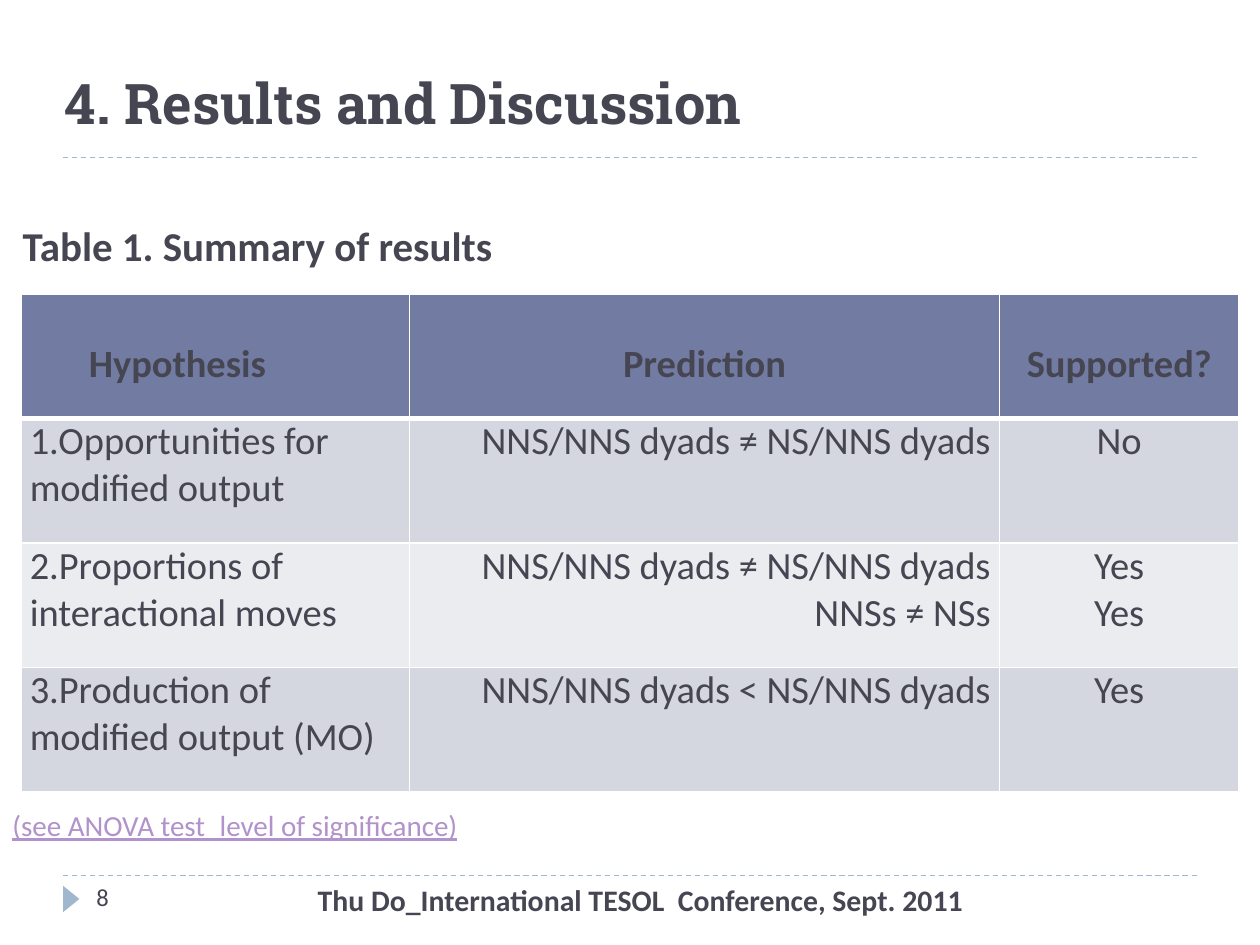
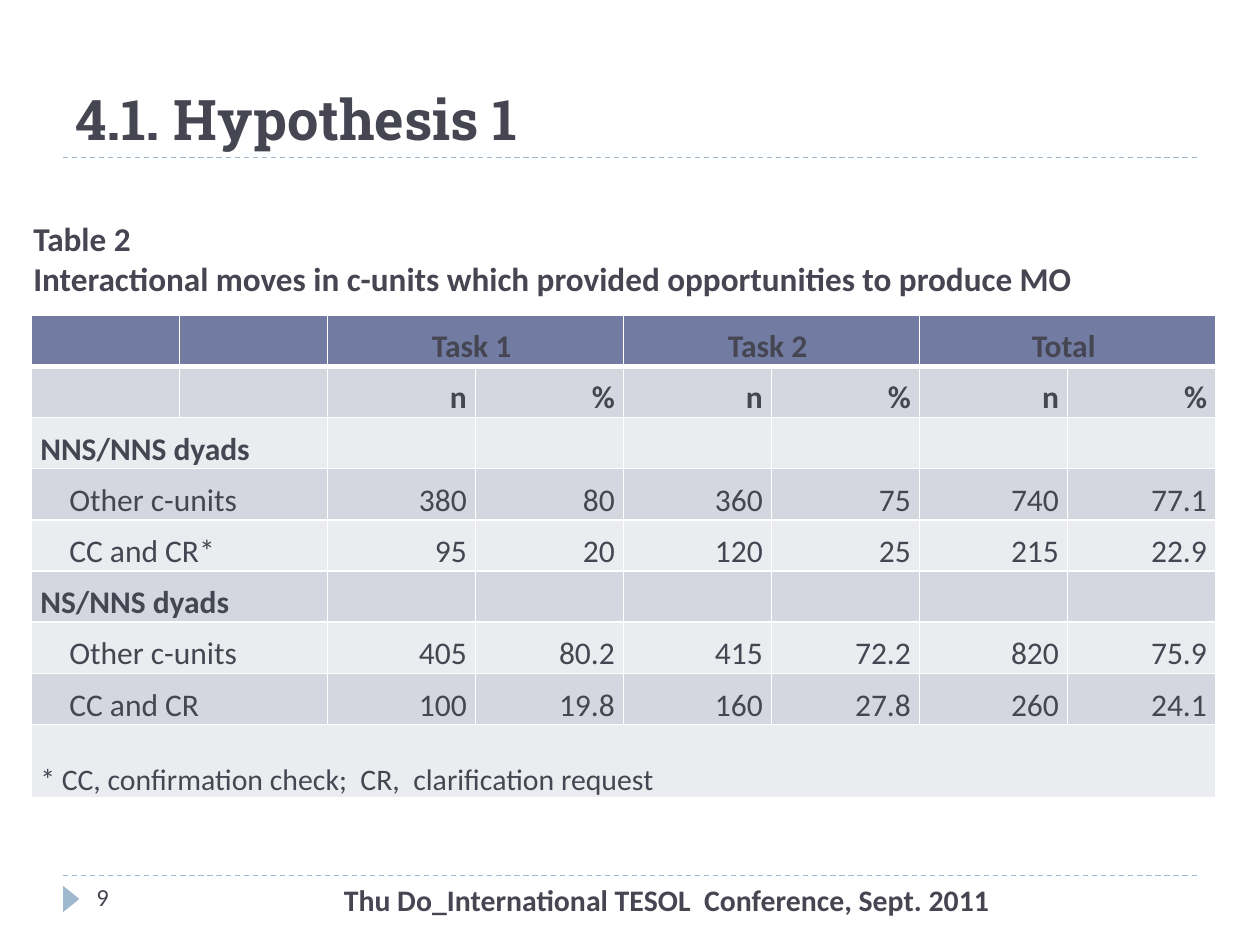
"""Build two slides that report the results of a study of dyads."""
from dataclasses import dataclass, field

from lxml import etree
from pptx import Presentation
from pptx.dml.color import RGBColor
from pptx.enum.dml import MSO_LINE
from pptx.enum.shapes import MSO_CONNECTOR, MSO_SHAPE
from pptx.enum.text import MSO_ANCHOR, PP_ALIGN
from pptx.oxml.ns import qn
from pptx.util import Emu, Inches, Pt

DASH = MSO_LINE.DASH
LINE, PEAK = MSO_CONNECTOR.STRAIGHT, MSO_SHAPE.ISOSCELES_TRIANGLE
TOP, MID, LOW = MSO_ANCHOR.TOP, MSO_ANCHOR.MIDDLE, MSO_ANCHOR.BOTTOM
LEFT, MIDST, RIGHT = PP_ALIGN.LEFT, PP_ALIGN.CENTER, PP_ALIGN.RIGHT

COLS, ROWS = 120, 90
WIDE, HIGH = Inches(10), Inches(7.5)
INK = {"text": "464653", "rule": "9FB8CD", "link": "B292CA", "head": "727CA3",
       "odd": "D5D7E0", "even": "EBECF0", "edge": "FFFFFF"}
BODY, SLAB = "Calibri", "Roboto Slab"
PAD = (1.2, 0.6, 1.2, 0.6)
SIDE = 0.84
FOOT = 83.4


@dataclass
class Note:
    """A text box: left, top, width and height in grid units, text and format."""
    box: tuple[float, float, float, float]
    text: str
    form: dict = field(default_factory=dict)


@dataclass
class Cell:
    """A table cell: text, number of columns and format."""
    text: str = ""
    span: int = 1
    form: dict = field(default_factory=dict)


@dataclass
class Grid:
    """A table: left and top, column widths, row heights, rows of cells."""
    spot: tuple[float, float]
    cols: list[float]
    rows: list[float]
    cells: list[list[Cell]]


def across(n: float) -> Emu:
    """Turn grid columns into a length."""
    return Emu(round(WIDE * n / COLS))


def down(n: float) -> Emu:
    """Turn grid rows into a length."""
    return Emu(round(HIGH * n / ROWS))


def place(box: tuple) -> tuple:
    """Turn a grid box into lengths."""
    x, y, w, h = box
    return across(x), down(y), across(w), down(h)


def hue(name: str) -> RGBColor:
    """Look up a colour."""
    return RGBColor.from_string(INK[name])


def write(frame, text: str, *, size: float = 18, face: str = BODY, tint: str = "text",
          bold: bool = False, under: bool = False, align=LEFT, pitch: float | None = None) -> None:
    """Write each line of the text as a paragraph."""
    for n, line in enumerate(text.split("\n")):
        para = frame.add_paragraph() if n else frame.paragraphs[0]
        para.alignment = align
        if pitch:
            para.line_spacing = pitch
        run = para.add_run()
        run.text = line
        font = run.font
        font.size, font.name, font.bold, font.underline = Pt(size), face, bold, under
        font.color.rgb = hue(tint)


def inset(item, pad: tuple) -> None:
    """Set the left, top, right and bottom margins of a frame or cell."""
    item.margin_left, item.margin_right = across(pad[0]), across(pad[2])
    item.margin_top, item.margin_bottom = down(pad[1]), down(pad[3])


def add_note(slide, note: Note) -> None:
    """Add a text box."""
    form = dict(note.form)
    frame = slide.shapes.add_textbox(*place(note.box)).text_frame
    frame.word_wrap = True
    frame.vertical_anchor = form.pop("anchor", TOP)
    inset(frame, form.pop("pad", PAD))
    write(frame, note.text, **form)


def add_rule(slide, y: float) -> None:
    """Add a dashed line across the slide."""
    rule = slide.shapes.add_connector(LINE, across(6), down(y), across(114), down(y))
    rule.line.color.rgb = hue("rule")
    rule.line.width = Pt(0.75)
    rule.line.dash_style = DASH
    etree.SubElement(rule._element.spPr, qn("a:effectLst"))


def edge(cell, tops: float, base: float) -> None:
    """Draw the four borders of a cell."""
    props = cell._tc.get_or_add_tcPr()
    for side, width in {"L": 1, "R": 1, "T": tops, "B": base}.items():
        line = etree.SubElement(props, qn(f"a:ln{side}"), w=str(Pt(width)))
        fill = etree.SubElement(line, qn("a:solidFill"))
        etree.SubElement(fill, qn("a:srgbClr"), val=INK["edge"])


def add_grid(slide, grid: Grid) -> None:
    """Add a table with a header row and bands."""
    box = (*grid.spot, sum(grid.cols), sum(grid.rows))
    table = slide.shapes.add_table(len(grid.rows), len(grid.cols), *place(box)).table
    for col, width in zip(table.columns, grid.cols):
        col.width = across(width)
    for r, (height, cells) in enumerate(zip(grid.rows, grid.cells)):
        table.rows[r].height = down(height)
        for c in range(len(grid.cols)):
            cell = table.cell(r, c)
            edge(cell, 3 if r == 1 else 1, 3 if r == 0 else 1)
            cell.fill.solid()
            cell.fill.fore_color.rgb = hue("head" if r == 0 else "odd" if r % 2 else "even")
            inset(cell, (SIDE, 0, SIDE, 0))
        c = 0
        for item in cells:
            cell = table.cell(r, c)
            if item.span > 1:
                cell.merge(table.cell(r, c + item.span - 1))
            if item.text:
                form = dict(item.form)
                cell.vertical_anchor = form.pop("anchor", TOP)
                inset(cell, form.pop("pad", (SIDE, 0, SIDE, 0)))
                write(cell.text_frame, item.text, **form)
            c += item.span


def add_page(deck, num: int, title: Note, foot: tuple, notes: list[Note], grid: Grid) -> None:
    """Add a slide with its rules, title, footer, table and notes."""
    slide = deck.slides.add_slide(deck.slide_layouts[6])
    for y in (FOOT, 15):
        add_rule(slide, y)
    mark = slide.shapes.add_shape(PEAK, *place((5.52, 84.84, 2.52, 1.56)))
    mark.rotation = 90
    mark.shadow.inherit = False
    mark.fill.solid()
    mark.fill.fore_color.rgb = hue("rule")
    mark.line.fill.background()
    title.form |= dict(size=32, face=SLAB, bold=True, anchor=LOW)
    left, width = foot
    credit = Note((left, FOOT, width, 4.8), "Thu Do_International TESOL  Conference, Sept. 2011",
                  dict(size=17, bold=True, align=MIDST))
    page = Note((8, FOOT, 26, 4.8), str(num), dict(size=14))
    add_grid(slide, grid)
    for note in (title, credit, page, *notes):
        add_note(slide, note)


def sum_grid() -> Grid:
    """Lay out the summary of results."""
    pads = [(SIDE, 4.44, 8.04, 0)] + [(SIDE, 4.44, SIDE, 0)] * 2
    names = ("Hypothesis", "Prediction", "Supported?")
    head = [Cell(name, form=dict(size=22, bold=True, align=MIDST, pad=pad))
            for name, pad in zip(names, pads)]
    data = [
        ("1.Opportunities for modified output", "NNS/NNS dyads ≠ NS/NNS dyads", "No"),
        ("2.Proportions of interactional moves",
         "NNS/NNS dyads ≠ NS/NNS dyads\nNNSs ≠ NSs", "Yes\nYes"),
        ("3.Production of modified output (MO)", "NNS/NNS dyads < NS/NNS dyads", "Yes"),
    ]
    body = [[Cell(text, form=dict(size=22, align=align))
             for text, align in zip(row, (LEFT, RIGHT, MIDST))] for row in data]
    return Grid((2, 28), [37, 56.2, 22.8], [11.85] * 4, [head, *body])


def move_grid() -> Grid:
    """Lay out the counts of interactional moves."""
    bold = dict(bold=True, anchor=LOW)
    top = bold | dict(align=MIDST, pad=(SIDE, 0, 1.6, 0))
    cells = [
        [Cell(), Cell(), *(Cell(name, 2, top) for name in ("Task 1", "Task 2", "Total"))],
        [Cell(), Cell(), *(Cell(name, 1, bold | dict(align=RIGHT)) for name in ("n", "%") * 3)],
    ]
    data = {
        "NNS/NNS dyads": [("Other c-units", "380 80 360 75 740 77.1"),
                          ("CC and CR*", "95 20 120 25 215 22.9")],
        "NS/NNS dyads": [("Other c-units", "405 80.2 415 72.2 820 75.9"),
                         ("CC and CR", "100 19.8 160 27.8 260 24.1")],
    }
    for group, lines in data.items():
        cells.append([Cell(group, 2, bold)])
        for name, nums in lines:
            cells.append([Cell(name, 2, dict(anchor=LOW, pad=(3.6, 0, SIDE, 0))),
                          *(Cell(num, 1, dict(anchor=LOW, align=RIGHT)) for num in nums.split())])
    cells.append([Cell("* CC, confirmation check;  CR,  clarification request", 8,
                       dict(size=17, anchor=LOW))])
    return Grid((3, 30), [14.1] * 8, [4.88] * 8 + [7], cells)


def main() -> None:
    """Build and save the deck."""
    deck = Presentation()
    deck.slide_width, deck.slide_height = WIDE, HIGH
    add_page(
        deck, 8,
        Note((5, 6, 108, 14), "4. Results and Discussion", dict(pad=(1.2, 0.6, 1.2, 7.1))),
        (19, 84),
        [Note((0, 15, 57, 12), "Table 1. Summary of results",
              dict(size=23.4, bold=True, anchor=MID, pad=(2.16, 5.3, 1.2, 0.6))),
         Note((0, 75, 81, 6), "(see ANOVA test_level of significance)",
              dict(size=16.6, tint="link", under=True, pitch=0.8, anchor=MID,
                   pad=(1.2, 2.4, 1.2, 0.6)))],
        sum_grid())
    add_page(
        deck, 9, Note((6, 0, 108, 15), "4.1. Hypothesis 1"), (25, 77),
        [Note((2, 20.2, 116, 8.9),
              "Table 2\nInteractional moves in c-units which provided opportunities to produce MO",
              dict(size=19, bold=True))],
        move_grid())
    deck.save("out.pptx")


if __name__ == "__main__":
    main()
